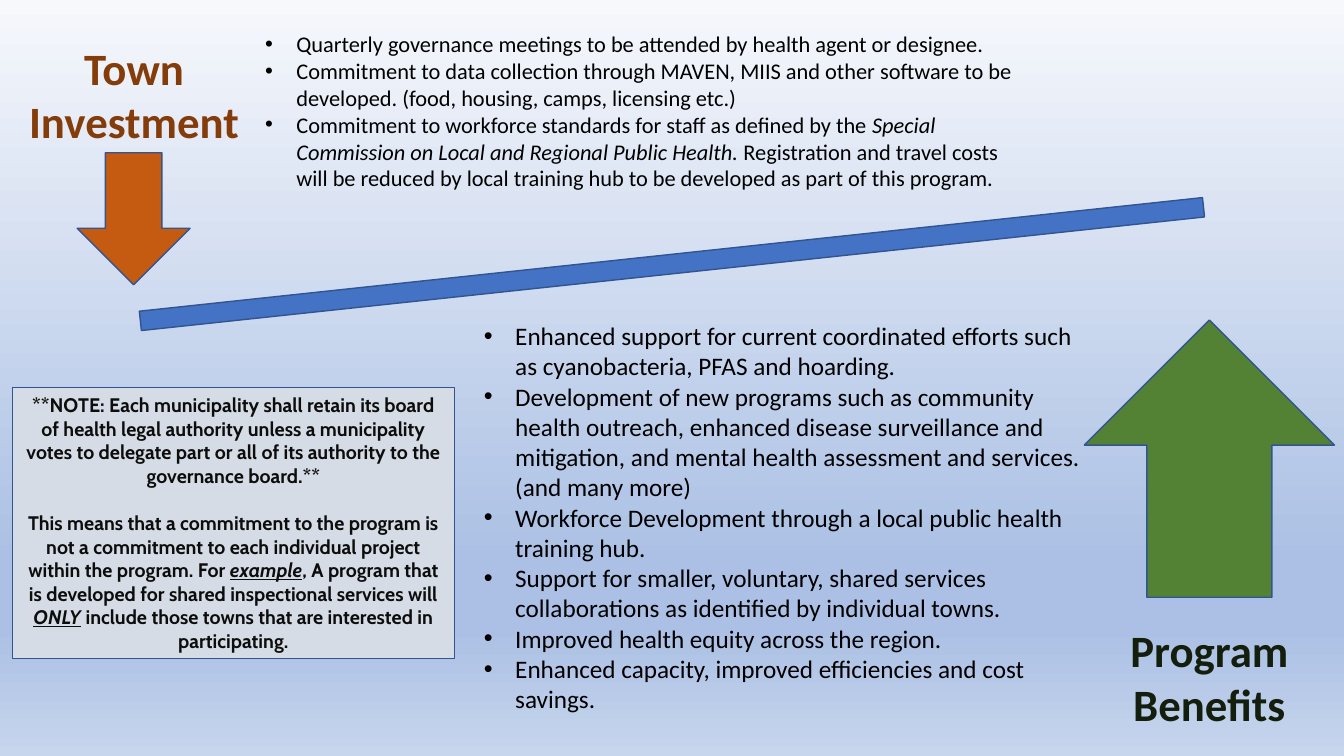
from pptx import Presentation
from pptx.dml.color import RGBColor
from pptx.enum.shapes import MSO_SHAPE as Preset
from pptx.enum.text import MSO_ANCHOR as Anchor, MSO_AUTO_SIZE as AutoSize, PP_ALIGN as Align
from pptx.oxml.ns import qn
from pptx.util import Inches, Pt
from lxml.etree import SubElement

COLORS = {
    "orange": "C55A11", "green": "548235", "blue": "4472C4", "outline": "325491",
    "brown": "843C0B", "dark_green": "131E0C", "black": "000000",
    "note_fill": "D6DCE5", "note_text": "0D0D0D",
}
BACKGROUND_STOPS = [(0, "F6F8FC"), (74, "ABC0E4"), (83, "ABC0E4"), (100, "C7D5ED")]

COMMITMENTS = [
    [("Quarterly governance meetings to be attended by health agent or designee.", "")],
    [("Commitment to data collection through MAVEN, MIIS and other software to be developed. "
      "(food, housing, camps, licensing etc.)", "")],
    [("Commitment to workforce standards for staff as defined by the ", ""),
     ("Special Commission on Local and Regional Public Health.", "i"),
     (" Registration and travel costs will be reduced by local training hub to be developed "
      "as part of this program.", "")],
]
BENEFITS = [
    [("Enhanced support for current coordinated efforts such as cyanobacteria, PFAS and hoarding.", "")],
    [("Development of new programs such as community health outreach, enhanced disease surveillance "
      "and mitigation, and mental health assessment and services. (and many more)", "")],
    [("Workforce Development through a local public health training hub.", "")],
    [("Support for smaller, voluntary, shared services collaborations as identified by "
      "individual towns.", "")],
    [("Improved health equity across the region.", "")],
    [("Enhanced capacity, improved efficiencies and cost savings.", "")],
]
NOTE = [
    [("**NOTE: Each municipality shall retain its board of health legal authority unless a "
      "municipality votes to delegate part or all of its authority to the governance board.**", "")],
    [("This means that a commitment to the program is not a commitment to each individual project "
      "within the program. For ", ""),
     ("example", "iu"),
     (", A program that is developed for shared inspectional services will ", ""),
     ("ONLY", "iu"),
     (" include those towns that are interested in participating.", "")],
]


def rgb(name):
    return RGBColor.from_string(COLORS[name])


def place(part, box):
    part.left, part.top, part.width, part.height = (Inches(length) for length in box)


def add_bullet(paragraph):
    properties = paragraph._p.get_or_add_pPr()
    properties.set("marL", str(Inches(0.31)))
    properties.set("indent", str(-Inches(0.31)))
    SubElement(properties, qn("a:buFont"), typeface="Arial")
    SubElement(properties, qn("a:buChar"), char="•")


def write(part, paragraphs, size=18, color="black", font="Calibri", bold=False,
          align=Align.LEFT, anchor=Anchor.TOP, bullets=False, gap=0):
    frame = part.text_frame
    frame.word_wrap = True
    frame.auto_size = AutoSize.NONE
    frame.vertical_anchor = anchor
    for index, runs in enumerate(paragraphs):
        paragraph = frame.add_paragraph() if index else frame.paragraphs[0]
        if bullets:
            add_bullet(paragraph)
        paragraph.alignment = align
        paragraph.space_before = Pt(gap if index else 0)
        for text, style in runs:
            run = paragraph.add_run()
            run.text = text
            run.font.name = font
            run.font.size = Pt(size)
            run.font.bold = bold
            run.font.italic = "i" in style
            run.font.underline = "u" in style
            run.font.color.rgb = rgb(color)


def add_block(slide, preset, box, fill, rotation=0, line=1):
    block = slide.shapes.add_shape(preset, *(Inches(length) for length in box))
    block.rotation = rotation
    block.shadow.inherit = False
    block.fill.solid()
    block.fill.fore_color.rgb = rgb(fill)
    block.line.color.rgb = rgb("outline")
    block.line.width = Pt(line)
    return block


def paint_background(slide):
    fill = slide.background.fill
    fill.gradient()
    fill.gradient_angle = 270
    stops = slide.element.find(".//" + qn("a:gsLst"))
    for stop in list(stops):
        stops.remove(stop)
    for percent, color in BACKGROUND_STOPS:
        stop = SubElement(stops, qn("a:gs"), pos=str(percent * 1000))
        SubElement(stop, qn("a:srgbClr"), val=color)


def add_investment(slide, heading, commitments, box):
    left, top, width, height = box
    place(heading, (left, top + 0.1, 2.42, 1.22))
    write(heading, [[("Town Investment", "")]], size=32, color="brown", bold=True, align=Align.CENTER)
    place(commitments, (left + 2.41, top, width - 2.41, height))
    write(commitments, COMMITMENTS, size=16, bullets=True)
    add_block(slide, Preset.RIGHT_ARROW, (left + 0.55, top + 1.36, 1.31, 1.12), "orange", rotation=90)


def add_benefits(slide, benefits, box):
    left, top, width, height = box
    place(benefits, (left, top, 6.11, height))
    write(benefits, BENEFITS, size=18, bullets=True)
    add_block(slide, Preset.RIGHT_ARROW, (left + 5.92, top + 0.18, 2.75, 2.48), "green", rotation=270)
    heading = slide.shapes.add_textbox(0, 0, 0, 0)
    place(heading, (left + 6.3, top + 3, 1.99, 1.18))
    write(heading, [[("Program Benefits", "")]], size=32, color="dark_green", bold=True, align=Align.CENTER)


def add_note(slide, box):
    note = add_block(slide, Preset.RECTANGLE, box, "note_fill", line=0.75)
    write(note, NOTE, size=14, color="note_text", font="Cabin", bold=True,
          align=Align.CENTER, anchor=Anchor.MIDDLE, gap=17)


def main():
    deck = Presentation()
    deck.slide_width, deck.slide_height = Inches(13.33), Inches(7.5)
    slide = deck.slides.add_slide(deck.slide_layouts[3])
    heading, commitments, benefits = slide.placeholders
    paint_background(slide)
    add_block(slide, Preset.MATH_MINUS, (-0.55, 2.21, 14.43, 0.82), "blue", rotation=353.9)
    add_investment(slide, heading, commitments, (0.12, 0.25, 10.22, 2.02))
    add_benefits(slide, benefits, (4.7, 3.13, 8.67, 4.61))
    add_note(slide, (0.12, 3.84, 4.39, 2.69))
    deck.save("out.pptx")


if __name__ == "__main__":
    main()
